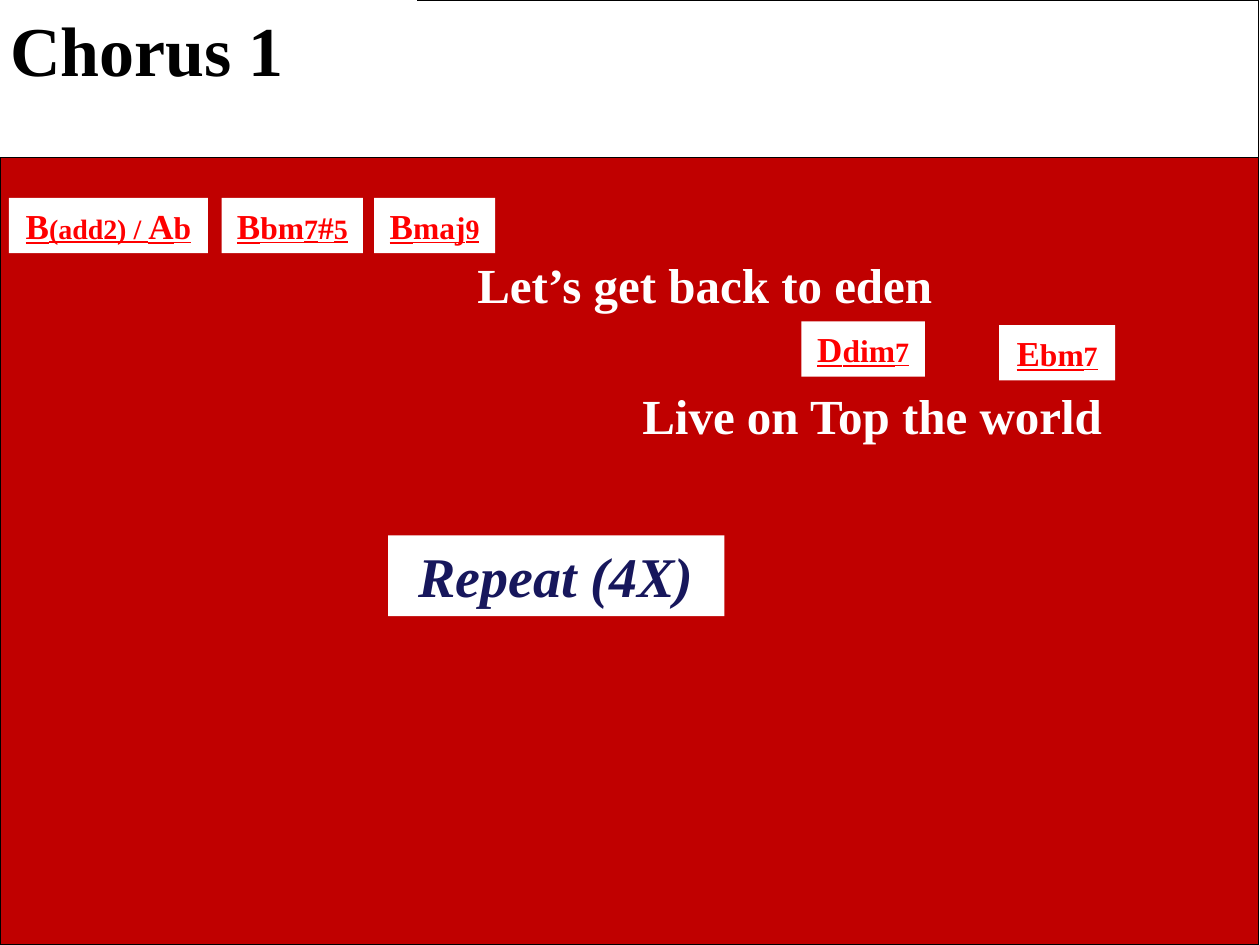
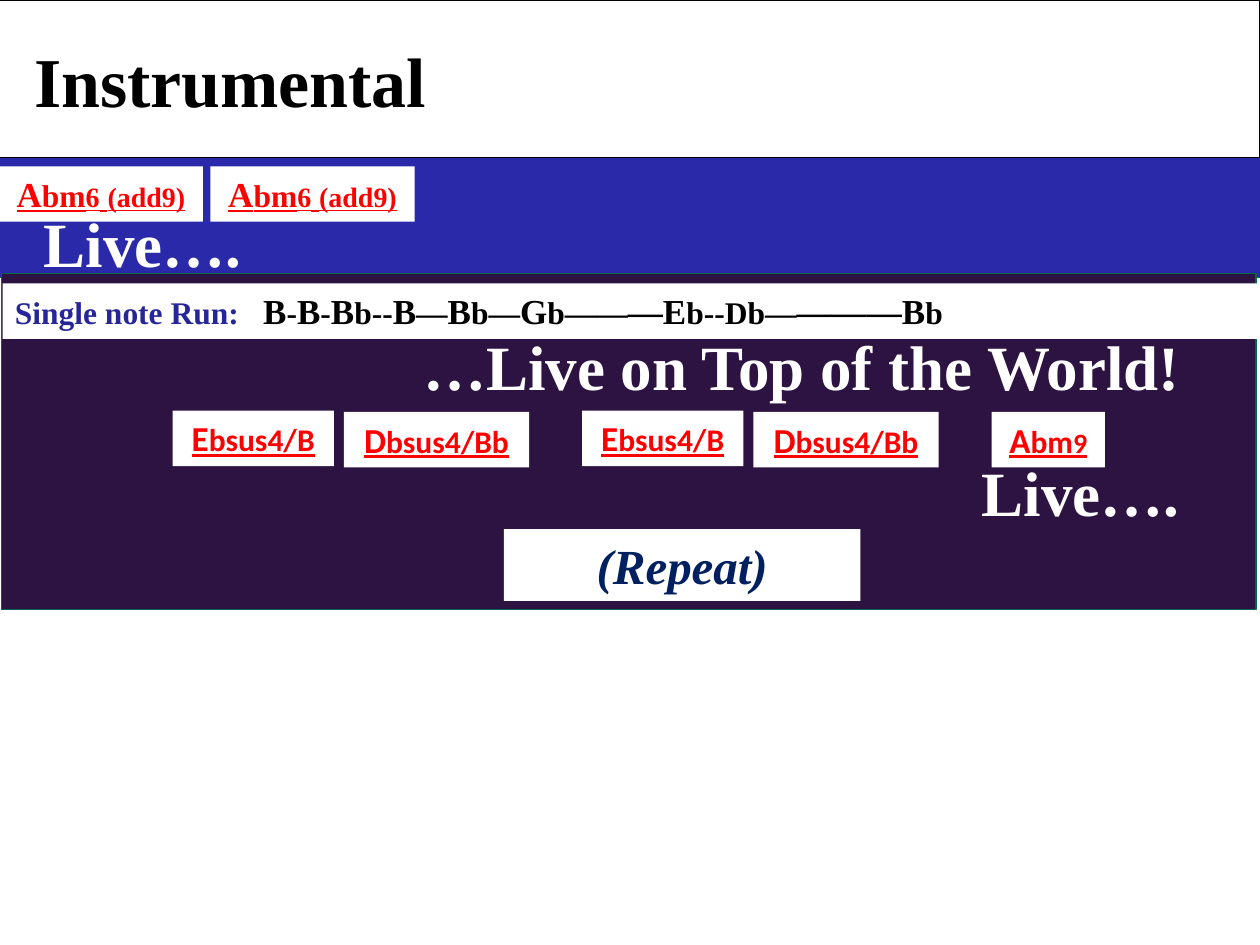
from lxml import etree
from pptx import Presentation
from pptx.dml.color import RGBColor
from pptx.enum.shapes import MSO_SHAPE
from pptx.enum.text import MSO_ANCHOR, MSO_AUTO_SIZE, PP_ALIGN
from pptx.oxml.ns import qn
from pptx.util import Inches, Pt

RECT = MSO_SHAPE.RECTANGLE
TOP = MSO_ANCHOR.TOP
NO_FIT = MSO_AUTO_SIZE.NONE
LEFT, CENTER, RIGHT = PP_ALIGN.LEFT, PP_ALIGN.CENTER, PP_ALIGN.RIGHT

COLORS = {
    "white": "FFFFFF", "black": "000000", "chorus": "C00000", "intro": "2929A9",
    "run": "2D1341", "edge": "00664D", "chord": "FF0000", "label": "262699",
    "repeat_navy": "17175C", "repeat_blue": "002060",
}
SERIF, SANS = "Times New Roman", "Calibri"
TITLE_SIZE = (3.33, 0.77)
CHORD_H = 0.44


def paint(sp, fill, line=None):
    sp.shadow.inherit = False
    sp.fill.solid()
    sp.fill.fore_color.rgb = RGBColor.from_string(COLORS[fill])
    if line:
        sp.line.color.rgb = RGBColor.from_string(COLORS[line])
        sp.line.width = Pt(0.75)
    else:
        sp.line.fill.background()


def write(sp, runs, color, align=LEFT, font=SERIF, wrap=True, underline=False, italic=False):
    tf = sp.text_frame
    tf.word_wrap = wrap
    tf.auto_size = NO_FIT
    tf.vertical_anchor = TOP
    p = tf.paragraphs[0]
    p.alignment = align
    for text, size in runs:
        r = p.add_run()
        r.text = text
        r.font.name = font
        r.font.size = Pt(size)
        r.font.bold = True
        r.font.italic = italic
        r.font.underline = underline
        r.font.color.rgb = RGBColor.from_string(COLORS[color])
    return p


ABM6 = [("A", 20), ("bm", 18), ("6", 16), (" ", 18), ("(add9)", 16)]
EBSUS = [("E", 20), ("bsus4/B", 18)]
DBSUS = [("D", 20), ("bsus4/Bb", 18)]

SLIDES = [
    {
        "title": ("Chorus 1", -0.02, 0),
        "bands": [(0, 1.25, 9.99, 6.25, "chorus", "black"),
                  (-0.02, 0, 10.01, 1.25, "white", "black")],
        "chords": [
            (0.07, 1.57, 1.58, SERIF, [("B", 20), ("(add2) / ", 16), ("A", 20), ("b", 18)]),
            (1.76, 1.57, 1.12, SERIF, [("B", 20), ("bm", 18), ("7", 16), ("#", 18), ("5", 16)]),
            (2.97, 1.57, 0.96, SERIF, [("B", 20), ("maj", 18), ("9", 16)]),
            (6.36, 2.55, 0.98, SERIF, [("D", 20), ("dim", 18), ("7", 16)]),
            (7.93, 2.58, 0.92, SERIF, [("E", 20), ("bm", 18), ("7", 16)]),
        ],
        "lyrics": [("Let’s get back to eden", 28, 3.69, 1.97, 6.3, 0.57, LEFT),
                   ("Live on Top the world", 28, 5, 3.01, 4.42, 0.57, LEFT)],
        "repeat": ("Repeat (4X)", 32, "repeat_navy", 3.08, 4.25, 2.67, 0.64),
    },
    {
        "title": ("Instrumental", 0.17, 0.25),
        "bands": [(-0.02, 1.25, 10.03, 0.95, "intro", "edge"),
                  (0.01, 2.17, 9.96, 2.67, "run", "edge"),
                  (-0.01, 0, 10.01, 1.25, "white", "black")],
        "chords": [
            (-0.01, 1.32, 1.62, SERIF, ABM6),
            (1.67, 1.32, 1.62, SERIF, ABM6),
            (1.37, 3.26, 1.28, SANS, EBSUS),
            (2.73, 3.27, 1.47, SANS, DBSUS),
            (4.62, 3.26, 1.28, SANS, EBSUS),
            (5.98, 3.27, 1.47, SANS, DBSUS),
            (7.87, 3.27, 0.9, SANS, [("A", 20), ("bm", 18), ("9", 16)]),
        ],
        "note_run": [
            ("B", 20), ("-", 18), ("B", 20), ("-", 18), ("B", 20), ("b--", 18), ("B", 20),
            ("—", 18), ("B", 20), ("b—", 18), ("G", 20), ("b——", 18), ("—E", 20),
            ("b--Db—", 18), ("———B", 20), ("b", 18),
        ],
        "lyrics": [("…Live on Top of the World!", 36, 3.26, 2.55, 6.71, 0.71, LEFT),
                   ("Live….", 36, 0.25, 1.57, 2, 0.71, LEFT),
                   ("Live….", 36, 7.42, 3.55, 2.04, 0.71, RIGHT)],
        "repeat": ("(Repeat)", 28, "repeat_blue", 4, 4.2, 2.83, 0.57),
    },
]

prs = Presentation()
prs.slide_width, prs.slide_height = Inches(10), Inches(7.5)

for song in SLIDES:
    s = prs.slides.add_slide(prs.slide_layouts[5])
    shapes = s.shapes

    title = shapes.title
    text, x, y = song["title"]
    title.left, title.top = Inches(x), Inches(y)
    title.width, title.height = map(Inches, TITLE_SIZE)
    title.fill.solid()
    title.fill.fore_color.rgb = RGBColor.from_string(COLORS["white"])
    write(title, [(text, 40)], "black")

    for *box, fill, line in song["bands"]:
        band = shapes.add_shape(RECT, *map(Inches, box))
        paint(band, fill, line)
        title.element.addprevious(band.element)

    for x, y, w, font, runs in song["chords"]:
        sp = shapes.add_shape(RECT, Inches(x), Inches(y), Inches(w), Inches(CHORD_H))
        paint(sp, "white")
        write(sp, runs, "chord", CENTER, font, wrap=False, underline=True)

    if "note_run" in song:
        sp = shapes.add_shape(RECT, Inches(0.02), Inches(2.25), Inches(9.99), Inches(CHORD_H))
        paint(sp, "white")
        write(sp, [("Single note Run:\t", 18)], "label")
        p = write(sp, song["note_run"], "black")
        tabs = etree.SubElement(p._p.get_or_add_pPr(), qn("a:tabLst"))
        etree.SubElement(tabs, qn("a:tab"), pos=str(Inches(1.97)), algn="l")

    for text, size, *box, align in song["lyrics"]:
        sp = shapes.add_textbox(*map(Inches, box))
        write(sp, [(text, size)], "white", align)

    text, size, color, *box = song["repeat"]
    sp = shapes.add_shape(RECT, *map(Inches, box))
    paint(sp, "white")
    write(sp, [(text, size)], color, CENTER, italic=True)

prs.save("out.pptx")
